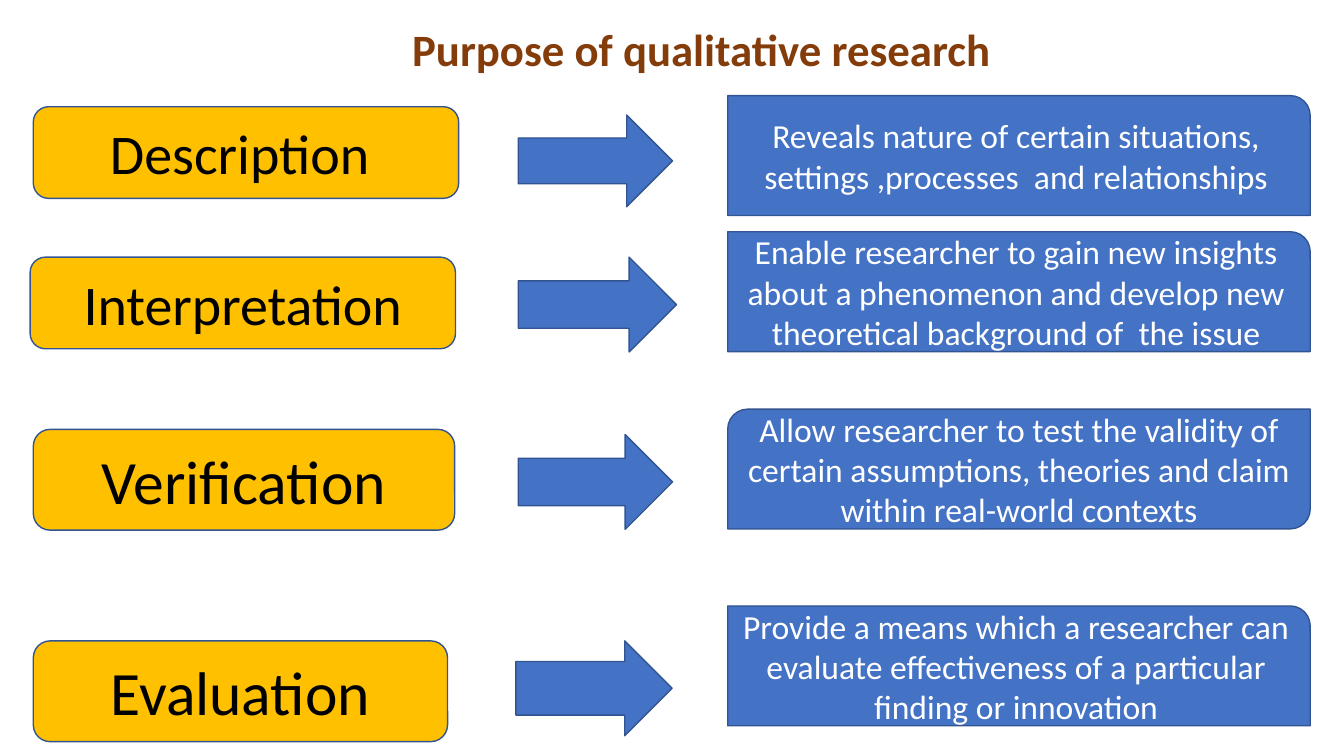
from pptx import Presentation
from pptx import util as u
from pptx.dml.color import RGBColor
from pptx.enum import shapes, text

BROWN = RGBColor(0x84, 0x3C, 0x0B)
AMBER = RGBColor(0xFF, 0xC0, 0x00)
BLUE = RGBColor(0x44, 0x72, 0xC4)
OUTLINE = RGBColor(0x32, 0x54, 0x91)
BLACK = RGBColor(0x00, 0x00, 0x00)
WHITE = RGBColor(0xFF, 0xFF, 0xFF)
KIND = shapes.MSO_SHAPE


def write(shape, wording, color, **font_format):
    """Put one centred paragraph in a shape."""
    frame = shape.text_frame
    frame.word_wrap = True
    frame.vertical_anchor = text.MSO_ANCHOR.MIDDLE
    paragraph = frame.paragraphs[0]
    paragraph.alignment = text.PP_ALIGN.CENTER
    run = paragraph.add_run()
    run.text = wording
    run.font.color.rgb = color
    for name, value in {"name": "Calibri", **font_format}.items():
        setattr(run.font, name, value)


def add_box(kind, box, fill):
    """Add an outlined shape; box is left, top, width, height in cm."""
    shape = slide.shapes.add_shape(kind, *[u.Cm(length) for length in box])
    shape.shadow.inherit = False
    shape.fill.solid()
    shape.fill.fore_color.rgb = fill
    shape.line.color.rgb = OUTLINE
    shape.line.width = u.Pt(1)
    return shape


presentation = Presentation()
presentation.slide_width = u.Cm(33.87)
presentation.slide_height = u.Cm(19.05)
slide = presentation.slides.add_slide(presentation.slide_layouts[5])

# Title
title = slide.shapes.title
title_place = {"left": 0, "top": 0.36, "width": 35.36, "height": 1.88}
for name, value in title_place.items():
    setattr(title, name, u.Cm(value))
write(title, "Purpose of qualitative research", BROWN, size=u.Pt(32), bold=True)
title.text_frame.paragraphs[0].line_spacing = 0.9

# Purposes: label, its size and box, arrow box, explanation, its shape and top
purposes = [
    ("Description ", 40, (0.84, 2.69, 10.72, 2.31), (13.06, 2.9, 3.89, 2.31),
     "Reveals nature of certain situations, settings ,processes  and relationships",
     KIND.ROUND_1_RECTANGLE, 2.41),
    ("Interpretation", 40, (0.76, 6.48, 10.72, 2.31), (13.06, 6.48, 3.99, 2.39),
     "Enable researcher to gain new insights about a phenomenon and develop new "
     "theoretical background of  the issue",
     KIND.ROUND_1_RECTANGLE, 5.84),
    ("Verification", 44, (0.84, 10.82, 10.62, 2.54), (13.06, 10.95, 3.89, 2.39),
     "Allow researcher to test the validity of certain assumptions, theories and "
     "claim within real-world contexts",
     KIND.ROUND_2_DIAG_RECTANGLE, 10.31),
    ("Evaluation", 44, (0.84, 16.15, 10.44, 2.54), (13, 16.15, 3.94, 2.39),
     "Provide a means which a researcher can evaluate effectiveness of a "
     "particular finding or innovation",
     KIND.ROUND_1_RECTANGLE, 15.27),
]

# One row per purpose: label, arrow, explanation
for label, size, label_box, arrow_box, explanation, kind, top in purposes:
    label_shape = add_box(KIND.ROUNDED_RECTANGLE, label_box, AMBER)
    write(label_shape, label, BLACK, size=u.Pt(size))
    arrow = add_box(KIND.RIGHT_ARROW, arrow_box, BLUE)
    explanation_shape = add_box(kind, (18.34, top, 14.68, 3.02), BLUE)
    write(explanation_shape, explanation, WHITE, size=u.Pt(24))

# The last arrow has a thicker shaft
arrow.adjustments[0] = 0.565

presentation.save("out.pptx")
